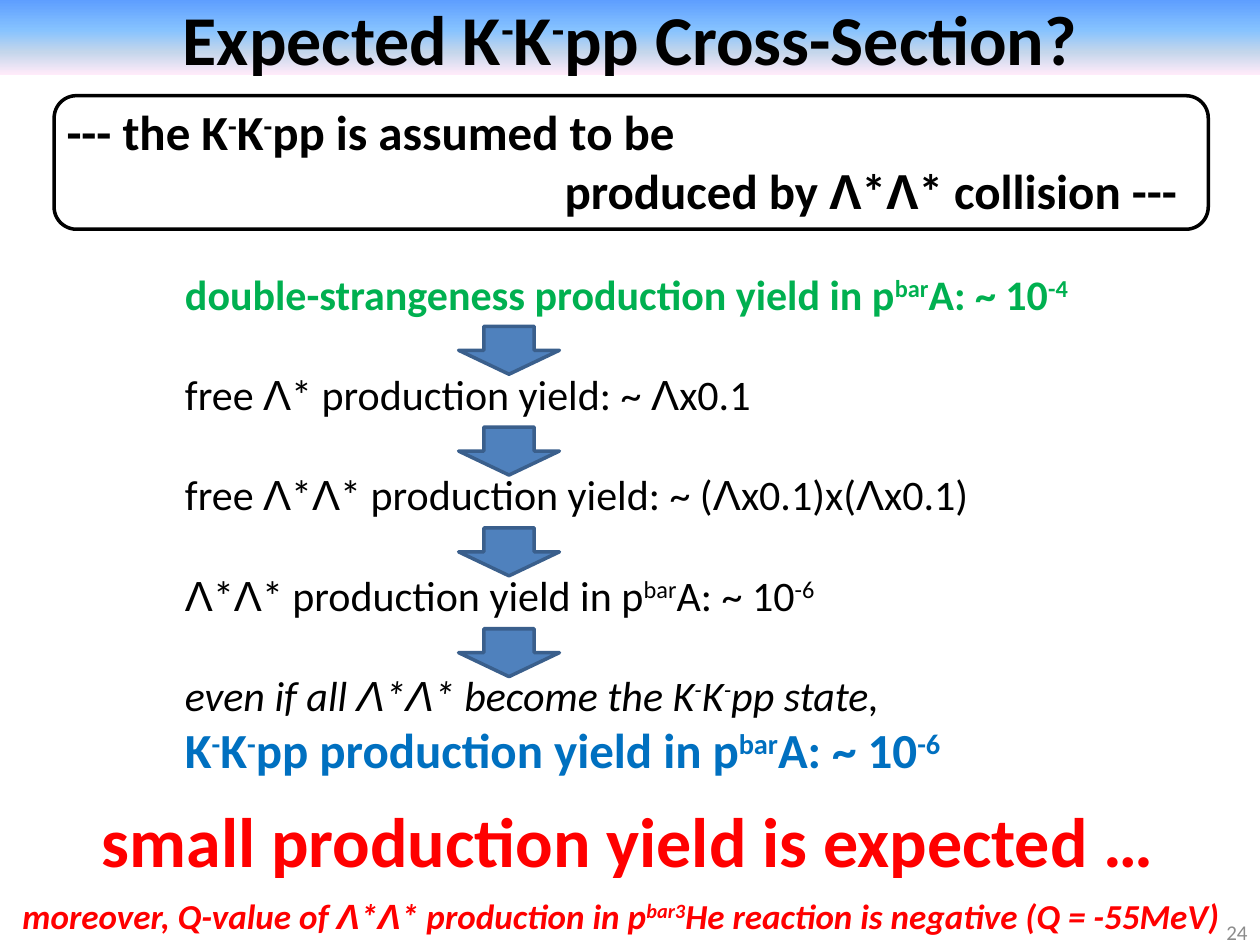
from dataclasses import dataclass
from itertools import groupby

from lxml.etree import SubElement
from pptx import Presentation
from pptx.dml.color import RGBColor
from pptx.enum.shapes import MSO_SHAPE as Preset
from pptx.enum.text import MSO_ANCHOR as Anchor, PP_ALIGN as Align
from pptx.oxml.ns import qn
from pptx.util import Inches, Pt


@dataclass(frozen=True)
class Theme:
    font: str = "Calibri"
    greek_font: str = "Arial"
    black: str = "000000"
    green: str = "00B050"
    blue: str = "0070C0"
    red: str = "FF0000"
    gray: str = "8C8C8C"
    arrow_fill: str = "4F81BD"
    arrow_line: str = "3A5F8C"
    title_stops: tuple = ((0, "5E9EFF"), (40, "85C2FF"), (70, "C4D6EB"), (100, "FFEBFA"))
    headline: int = 40
    subhead: int = 28
    body: int = 24
    remark: int = 20
    number: int = 12
    line_width: int = 2


THEME = Theme()


@dataclass(frozen=True)
class Box:
    left: float
    top: float
    width: float
    height: float

    def lengths(self) -> tuple:
        return tuple(Inches(value) for value in (self.left, self.top, self.width, self.height))


@dataclass(frozen=True)
class Line:
    """One paragraph; text between carets is superscript."""
    text: str
    size: int = THEME.body
    color: str = THEME.black
    bold: bool = False
    italic: bool = False
    align: Align = Align.LEFT
    space_before: float = 0


def write_line(paragraph, line: Line) -> None:
    paragraph.alignment = line.align
    paragraph.space_before = Pt(line.space_before)
    for index, part in enumerate(line.text.split("^")):
        for is_greek, letters in groupby(part, key=lambda letter: letter == "Λ"):
            run = paragraph.add_run()
            run.text = "".join(letters)
            font = run.font
            font.name = THEME.greek_font if is_greek else THEME.font
            font.size = Pt(line.size)
            font.bold, font.italic = line.bold, line.italic
            font.color.rgb = RGBColor.from_string(line.color)
            if index % 2:
                run._r.get_or_add_rPr().set("baseline", "30000")


def write_lines(text_frame, lines: list[Line], wrap: bool = False, anchor: Anchor = Anchor.TOP) -> None:
    text_frame.word_wrap = wrap
    text_frame.vertical_anchor = anchor
    for index, line in enumerate(lines):
        paragraph = text_frame.add_paragraph() if index else text_frame.paragraphs[0]
        write_line(paragraph, line)


def add_text(slide, box: Box, lines: list[Line], wrap: bool = False, anchor: Anchor = Anchor.TOP):
    shape = slide.shapes.add_textbox(*box.lengths())
    write_lines(shape.text_frame, lines, wrap, anchor)
    return shape


def add_outlined(slide, preset: Preset, box: Box, line_color: str, fill_color: str | None = None) -> None:
    shape = slide.shapes.add_shape(preset, *box.lengths())
    shape.shadow.inherit = False
    if fill_color:
        shape.fill.solid()
        shape.fill.fore_color.rgb = RGBColor.from_string(fill_color)
    else:
        shape.fill.background()
    shape.line.color.rgb = RGBColor.from_string(line_color)
    shape.line.width = Pt(THEME.line_width)


def add_title_bar(slide, box: Box, line: Line) -> None:
    shape = slide.shapes.add_shape(Preset.RECTANGLE, *box.lengths())
    shape.shadow.inherit = False
    shape.line.fill.background()
    shape.fill.gradient()
    # Four gradient stops, running from top to bottom
    gradient = shape.element.spPr.find(qn("a:gradFill"))
    stops = gradient.find(qn("a:gsLst"))
    for stop in list(stops):
        stops.remove(stop)
    for position, color in THEME.title_stops:
        stop = SubElement(stops, qn("a:gs"), pos=str(position * 1000))
        SubElement(stop, qn("a:srgbClr"), val=color)
    gradient.find(qn("a:lin")).set("ang", "5400000")
    write_lines(shape.text_frame, [line], wrap=True, anchor=Anchor.MIDDLE)


def main() -> None:
    presentation = Presentation()
    presentation.slide_width, presentation.slide_height = Inches(10), Inches(7.5)
    slide = presentation.slides.add_slide(presentation.slide_layouts[6])

    # Title and page number
    add_title_bar(slide, Box(0, 0, 10, 0.59),
                  Line("Expected K^-^K^-^pp Cross-Section?", THEME.headline, bold=True, align=Align.CENTER))
    add_text(slide, Box(7.67, 7.2, 2.33, 0.4),
             [Line("24", THEME.number, THEME.gray, align=Align.RIGHT)], wrap=True, anchor=Anchor.MIDDLE)

    # Framed assumption
    assumption = add_text(slide, Box(0.43, 0.76, 9.16, 1.04), [
        Line("--- the K^-^K^-^pp is assumed to be", THEME.subhead, bold=True),
        Line("produced by Λ*Λ* collision ---", THEME.subhead, bold=True, align=Align.RIGHT),
    ], wrap=True)
    assumption.text_frame.margin_right = Inches(0.25)
    add_outlined(slide, Preset.ROUNDED_RECTANGLE, Box(0.43, 0.76, 9.16, 1.06), THEME.black)

    # Chain of yields, with a gap for an arrow between the steps
    gap, step = 28.5, 0.8
    add_text(slide, Box(1.37, 2.08, 7.34, 4.21), [
        Line("double-strangeness production yield in p^bar^A: ~ 10^-4^", color=THEME.green, bold=True),
        Line("free Λ* production yield: ~ Λx0.1", space_before=gap),
        Line("free Λ*Λ* production yield: ~ (Λx0.1)x(Λx0.1)", space_before=gap),
        Line("Λ*Λ* production yield in p^bar^A: ~ 10^-6^", space_before=gap),
        Line("even if all Λ*Λ* become the K^-^K^-^pp state,", italic=True, space_before=gap),
        Line("K^-^K^-^pp production yield in p^bar^A: ~ 10^-6^", THEME.subhead, THEME.blue, bold=True),
    ])
    for index in range(4):
        add_outlined(slide, Preset.DOWN_ARROW, Box(3.64, 2.59 + index * step, 0.8, 0.38),
                     THEME.arrow_line, THEME.arrow_fill)

    # Conclusion
    add_text(slide, Box(0.71, 6.28, 8.65, 0.77),
             [Line("small production yield is expected …", THEME.headline, THEME.red, bold=True)])
    add_text(slide, Box(0.08, 7.05, 9.83, 0.44),
             [Line("moreover, Q-value of Λ*Λ* production in p^bar3^He reaction is negative (Q = -55MeV)",
                   THEME.remark, THEME.red, bold=True, italic=True)])

    presentation.save("out.pptx")


if __name__ == "__main__":
    main()
